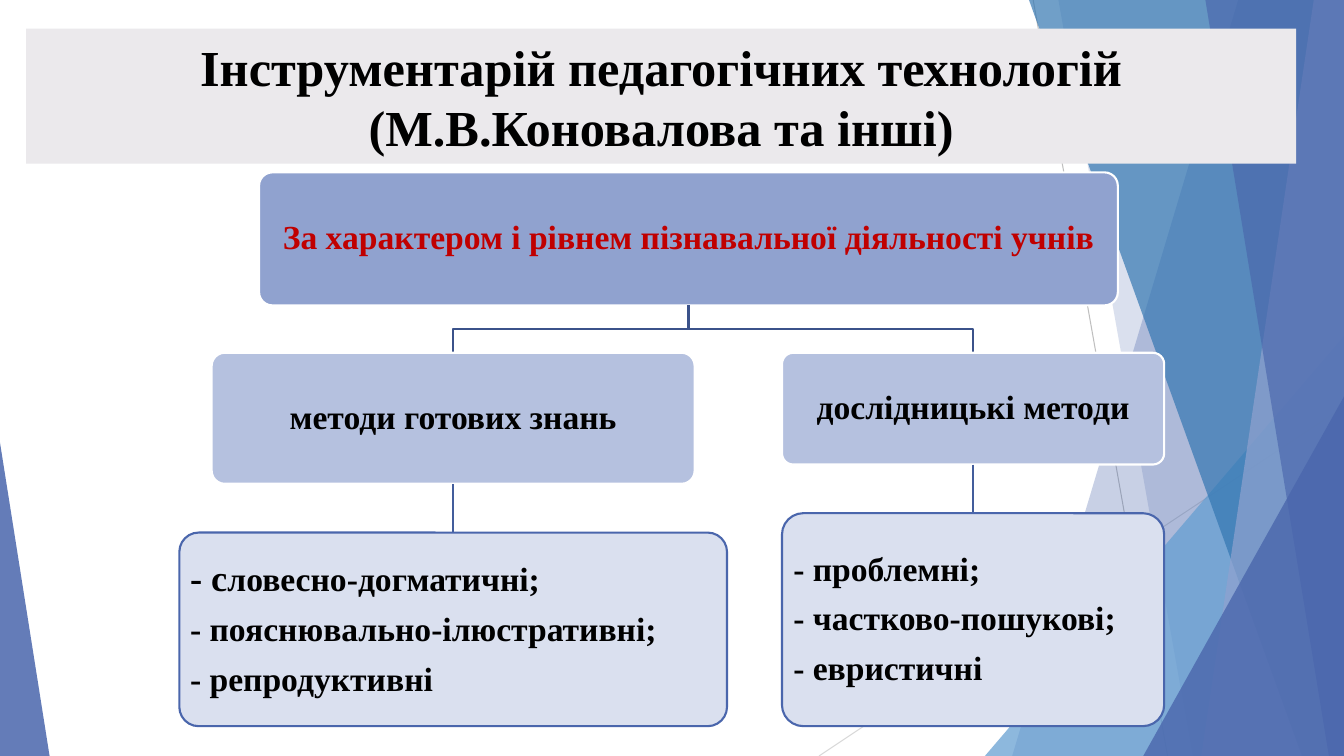
from lxml import etree
from pptx import Presentation
from pptx.dml.color import RGBColor
from pptx.enum.shapes import MSO_CONNECTOR, MSO_SHAPE
from pptx.enum.text import MSO_ANCHOR, PP_ALIGN
from pptx.oxml.ns import qn
from pptx.util import Emu, Inches, Pt

RECT = MSO_SHAPE.RECTANGLE
ROUND = MSO_SHAPE.ROUNDED_RECTANGLE
PEAK = MSO_SHAPE.ISOSCELES_TRIANGLE
LINE = MSO_CONNECTOR.STRAIGHT
MIDDLE = MSO_ANCHOR.MIDDLE
LEFT, CENTER = PP_ALIGN.LEFT, PP_ALIGN.CENTER

BLACK = RGBColor(0x00, 0x00, 0x00)
WHITE = RGBColor(0xFF, 0xFF, 0xFF)
RED = RGBColor(0xC0, 0x00, 0x00)
GRAY = RGBColor(0xBF, 0xBF, 0xBF)
SILVER = RGBColor(0xD9, 0xD9, 0xD9)
PEARL = RGBColor(0xEB, 0xE9, 0xEC)
BLUE = RGBColor(0x4A, 0x66, 0xAC)
SKY = RGBColor(0x62, 0x9D, 0xD1)
OCEAN = RGBColor(0x34, 0x77, 0xB2)
MID = RGBColor(0x90, 0xA2, 0xCF)
SOFT = RGBColor(0xB5, 0xC1, 0xDF)
PALE = RGBColor(0xDA, 0xE0, 0xEF)
NAVY = RGBColor(0x3B, 0x52, 0x8A)
STEEL = RGBColor(0x43, 0x5D, 0x9C)

COLS, ROWS = 160, 90
GAP, BASE = 5.8, 86.45
ROOT = (30.84, 20.52, 102.24, 15.84)
HEAD = 42


class Board:
    """Draws styled elements on one slide, measured in grid columns and rows."""

    face = "Times New Roman"
    size = 24
    rim = 1.5
    pad = 0.6

    def __init__(self, deck):
        self.slide = deck.slides.add_slide(deck.slide_layouts[6])
        self.shapes = self.slide.shapes
        self.col = deck.slide_width / COLS
        self.row = deck.slide_height / ROWS

    def spot(self, x, y):
        return Emu(round(x * self.col)), Emu(round(y * self.row))

    def paint(self, shape, fill, alpha=100, edge=None):
        shape.shadow.inherit = False
        shape.fill.solid()
        shape.fill.fore_color.rgb = fill
        if alpha < 100:
            color = shape._element.spPr.find(qn("a:solidFill"))[0]
            etree.SubElement(color, qn("a:alpha"), val=str(alpha * 1000))
        if edge is None:
            shape.line.fill.background()
        else:
            shape.line.color.rgb = edge
            shape.line.width = Pt(self.rim)

    def form(self, points, close):
        start, *rest = [self.spot(*point) for point in points]
        maker = self.shapes.build_freeform(*start)
        maker.add_line_segments(rest, close=close)
        return maker.convert_to_shape()

    def pane(self, top, foot, fill, alpha):
        points = [(top, 0), (COLS, 0), (COLS, ROWS), (foot, ROWS)]
        self.paint(self.form(points, True), fill, alpha)

    def wedge(self, left, top, wide, tip, fill, alpha):
        place = self.spot(left, top) + self.spot(wide, ROWS - top)
        shape = self.shapes.add_shape(PEAK, *place)
        shape.adjustments[0] = tip
        self.paint(shape, fill, alpha)

    def bend(self, points, color):
        shape = self.form(points, False)
        shape.shadow.inherit = False
        shape.fill.background()
        shape.line.color.rgb = color
        shape.line.width = Pt(self.rim)

    def wire(self, start, end, color, width):
        line = self.shapes.add_connector(LINE, *self.spot(*start), *self.spot(*end))
        line.line.color.rgb = color
        line.line.width = Pt(width)
        etree.SubElement(line._element.spPr, qn("a:effectLst"))

    def label(self, shape, lines, color, size, align, lead=""):
        frame = shape.text_frame
        frame.word_wrap = True
        frame.vertical_anchor = MIDDLE
        frame.margin_left = frame.margin_right = self.spot(self.pad, 0)[0]
        for index, line in enumerate(lines):
            para = frame.add_paragraph() if index else frame.paragraphs[0]
            if lead and not index:
                run = para.add_run()
                run.text = lead
                run.font.size = Pt(size + 2)
            para.add_run().text = line
            para.alignment = align
            font = para.font
            font.name, font.size, font.bold = self.face, Pt(size), True
            font.color.rgb = color
        return frame.paragraphs

    def title(self, place, text):
        shape = self.shapes.add_shape(RECT, *self.spot(*place[:2]), *self.spot(*place[2:]))
        self.paint(shape, PEARL)
        self.label(shape, [text], BLACK, 36, CENTER)

    def box(self, place, lines, fill, edge=WHITE, color=BLACK, align=CENTER, lead=""):
        shape = self.shapes.add_shape(ROUND, *self.spot(*place[:2]), *self.spot(*place[2:]))
        shape.adjustments[0] = 0.1
        self.paint(shape, fill, edge=edge)
        for para in self.label(shape, lines, color, self.size, align, lead):
            para.line_spacing = 0.9
            para.space_after = Pt(9.5)

    def branch(self, head, name, body, lead, lines):
        left, wide, tall = head
        center = left + wide / 2
        trunk = ROOT[0] + ROOT[2] / 2
        foot = ROOT[1] + ROOT[3]
        turn = (foot + HEAD) / 2
        self.bend([(trunk, foot), (trunk, turn), (center, turn), (center, HEAD)], NAVY)
        self.box((left, HEAD, wide, tall), [name], SOFT)
        top = HEAD + tall + GAP
        self.wire((center, HEAD + tall), (center, top), STEEL, self.rim)
        place = (center - body / 2, top, body, BASE - top)
        self.box(place, lines, PALE, BLUE, align=LEFT, lead=lead)


def main():
    deck = Presentation()
    deck.slide_width, deck.slide_height = Inches(13.33), Inches(7.5)
    board = Board(deck)

    board.wire((123, 0), (139, ROWS), GRAY, 0.75)
    board.wire((COLS, 48.4), (97.5, ROWS), SILVER, 0.75)
    board.pane(147.4, 120.5, BLUE, 30)
    board.pane(126, 142, BLUE, 20)
    board.wedge(117.25, 40, 42.75, 1, SKY, 72)
    board.pane(122.5, 155, OCEAN, 70)
    board.pane(156.4, 143, MID, 70)
    board.pane(143.5, 158.2, BLUE, 65)
    board.wedge(136.1, 47.2, 23.9, 1, BLUE, 80)
    board.wedge(0, 52.7, 5.9, 0, BLUE, 85)

    board.title((3.12, 3.4, 151.2, 16.1),
                "Інструментарій педагогічних технологій (М.В.Коновалова та інші)")
    board.box(ROOT, ["За характером і рівнем пізнавальної діяльності учнів"],
              MID, color=RED)
    board.branch((25.2, 57.5, 15.6), "методи готових знань", 65.2, "- с",
                 ["ловесно-догматичні;", "- пояснювально-ілюстративні;", "- репродуктивні"])
    board.branch((93.1, 45.5, 13.3), "дослідницькі методи", 45.5, "",
                 ["- проблемні;", "- частково-пошукові;", "- евристичні"])
    deck.save("out.pptx")


if __name__ == "__main__":
    main()
